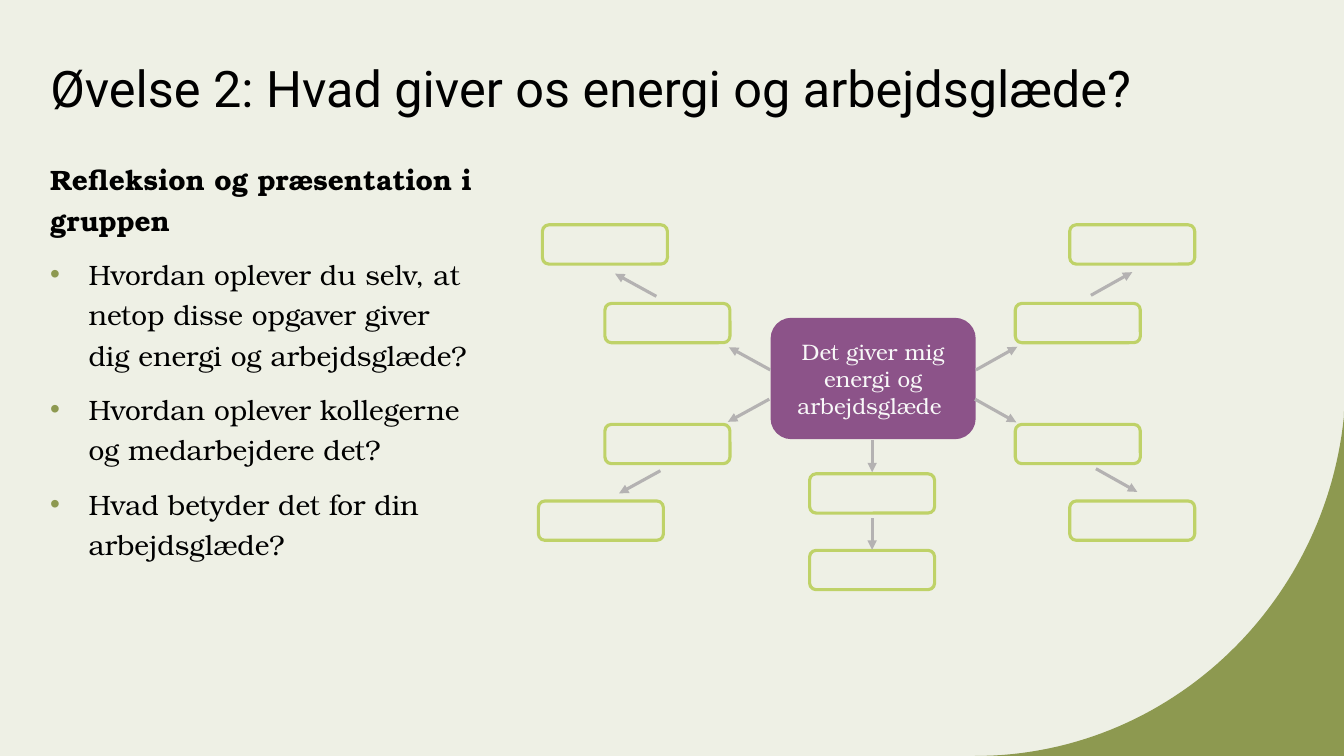
import lxml.etree
import pptx
import pptx.dml.color
import pptx.enum.shapes
import pptx.enum.text
import pptx.oxml.ns
import pptx.util

COLUMNS, ROWS = 133.3, 75  # grid cells of a tenth of an inch
COLORS = {
    "background": "EEF0E5", "olive": "8D9950", "lime": "BFD268",
    "plum": "8C5389", "arrow": "B4B2B2", "ink": "000000", "light": "F8F8F8",
}
HEADING_FONT, BODY_FONT = "Roboto", "TeX Gyre Bonum"
ALIGN = pptx.enum.text.PP_ALIGN
ANCHOR = pptx.enum.text.MSO_ANCHOR

QUESTIONS = [
    "Hvordan oplever du selv, at netop disse opgaver giver dig energi og arbejdsglæde?",
    "Hvordan oplever kollegerne og medarbejdere det?",
    "Hvad betyder det for din arbejdsglæde?",
]
ANSWER_SIZE = (12.4, 3.9)
# Each branch: arrow step, then (arrow start, top left of the answer) outwards.
BRANCHES = [
    ((-4.1, -2.25), [((76.4, 36.7), (60, 30.1)), ((65.1, 29.4), (53.8, 22.3))]),
    ((-4.1, 2.25), [((76.3, 39.6), (60, 42.1)), ((65.5, 46.7), (53.4, 49.7))]),
    ((0, 3.15), [((86.5, 43.7), (80.3, 47)), ((86.5, 51.4), (80.3, 54.6))]),
    ((4.1, 2.3), [((96.7, 39.6), (100.7, 42.1)), ((108.7, 46.5), (106.1, 49.7))]),
    ((4.1, -2.3), [((96.8, 36.7), (100.7, 30.1)), ((108.2, 29.3), (106.1, 22.3))]),
]


def cells(*counts):
    return [pptx.util.Inches(count / 10) for count in counts]


def rgb(name):
    return pptx.dml.color.RGBColor.from_string(COLORS[name])


def add_xml(parent, tag, **attributes):
    return lxml.etree.SubElement(parent, pptx.oxml.ns.qn(tag), attributes)


def write(paragraph, text, *, size, font=BODY_FONT, color="ink", bold=False,
          align=ALIGN.LEFT, spacing=1.0, before=0, bullet=None):
    paragraph.alignment = align
    paragraph.line_spacing = spacing
    paragraph.space_before = pptx.util.Pt(before)
    if bullet:
        indent = pptx.util.Inches(0.38)
        properties = paragraph._p.get_or_add_pPr()
        properties.set("marL", str(indent))
        properties.set("indent", str(-indent))
        bullet_color = add_xml(properties, "a:buClr")
        add_xml(bullet_color, "a:srgbClr", val=COLORS[bullet])
        add_xml(properties, "a:buFont", typeface="Arial")
        add_xml(properties, "a:buChar", char="•")
    run = paragraph.add_run()
    run.text = text
    run.font.size = pptx.util.Pt(size)
    run.font.name = font
    run.font.bold = bold
    run.font.color.rgb = rgb(color)


class Canvas:
    """Places styled elements on one slide, measured in grid cells."""

    def __init__(self, slide):
        self.slide = slide
        slide.background.fill.solid()
        slide.background.fill.fore_color.rgb = rgb("background")

    def corner(self, start, control_a, control_b, end, steps=60):
        """Fill the area between a cubic curve and the lower right corner."""
        curve = []
        for step in range(steps + 1):
            t = step / steps
            weights = ((1 - t) ** 3, 3 * t * (1 - t) ** 2, 3 * t * t * (1 - t), t ** 3)
            points = (start, control_a, control_b, end)
            curve.append(cells(*(sum(w * p[axis] for w, p in zip(weights, points))
                                 for axis in (0, 1))))
        outline = self.slide.shapes.build_freeform(*curve[0], scale=1.0)
        outline.add_line_segments(
            curve[1:] + [cells(COLUMNS, 40.8), cells(COLUMNS, ROWS)], close=True)
        wave = outline.convert_to_shape()
        wave.shadow.inherit = False
        wave.fill.solid()
        wave.fill.fore_color.rgb = rgb("olive")
        wave.line.fill.background()

    def text_area(self, *box, anchor=ANCHOR.TOP):
        frame = self.slide.shapes.add_textbox(*cells(*box)).text_frame
        frame.word_wrap = True
        frame.vertical_anchor = anchor
        return frame

    def rounded_box(self, *box, fill, line, width):
        node = self.slide.shapes.add_shape(
            pptx.enum.shapes.MSO_SHAPE.ROUNDED_RECTANGLE, *cells(*box))
        node.shadow.inherit = False
        node.fill.solid()
        node.fill.fore_color.rgb = rgb(fill)
        node.line.color.rgb = rgb(line)
        node.line.width = pptx.util.Pt(width)
        node.text_frame.vertical_anchor = ANCHOR.MIDDLE
        return node.text_frame

    def arrow(self, start, step):
        end = [a + b for a, b in zip(start, step)]
        connector = self.slide.shapes.add_connector(
            pptx.enum.shapes.MSO_CONNECTOR.STRAIGHT, *cells(*start, *end))
        connector.line.color.rgb = rgb("arrow")
        connector.line.width = pptx.util.Pt(2.25)
        add_xml(connector.line._get_or_add_ln(), "a:tailEnd", type="triangle")
        add_xml(connector._element.spPr, "a:effectLst")


def main():
    presentation = pptx.Presentation()
    presentation.slide_width, presentation.slide_height = cells(COLUMNS, ROWS)
    canvas = Canvas(presentation.slides.add_slide(presentation.slide_layouts[6]))

    canvas.corner((96.7, ROWS), (115.7, ROWS), (131.4, 60.2), (COLUMNS, 41.3))

    title = canvas.text_area(4, 1.8, 111.9, 14.5, anchor=ANCHOR.MIDDLE)
    write(title.paragraphs[0], "Øvelse 2: Hvad giver os energi og arbejdsglæde?",
          size=36, font=HEADING_FONT, spacing=0.9)

    theme = canvas.rounded_box(76.5, 31.6, 20.2, 11.9, fill="plum", line="plum", width=1)
    write(theme.paragraphs[0], "Det giver mig energi og arbejdsglæde ",
          size=16, color="light", align=ALIGN.CENTER)

    for step, answers in BRANCHES:
        for arrow_start, corner in answers:
            canvas.rounded_box(*corner, *ANSWER_SIZE,
                               fill="background", line="lime", width=2.25)
            canvas.arrow(arrow_start, step)

    reflection = canvas.text_area(4, 15, 44, 44.9)
    write(reflection.paragraphs[0], "Refleksion og præsentation i gruppen",
          size=20, bold=True, spacing=1.2)
    for question in QUESTIONS:
        write(reflection.add_paragraph(), question,
              size=20, spacing=1.2, before=10, bullet="olive")

    presentation.save("out.pptx")


if __name__ == "__main__":
    main()
